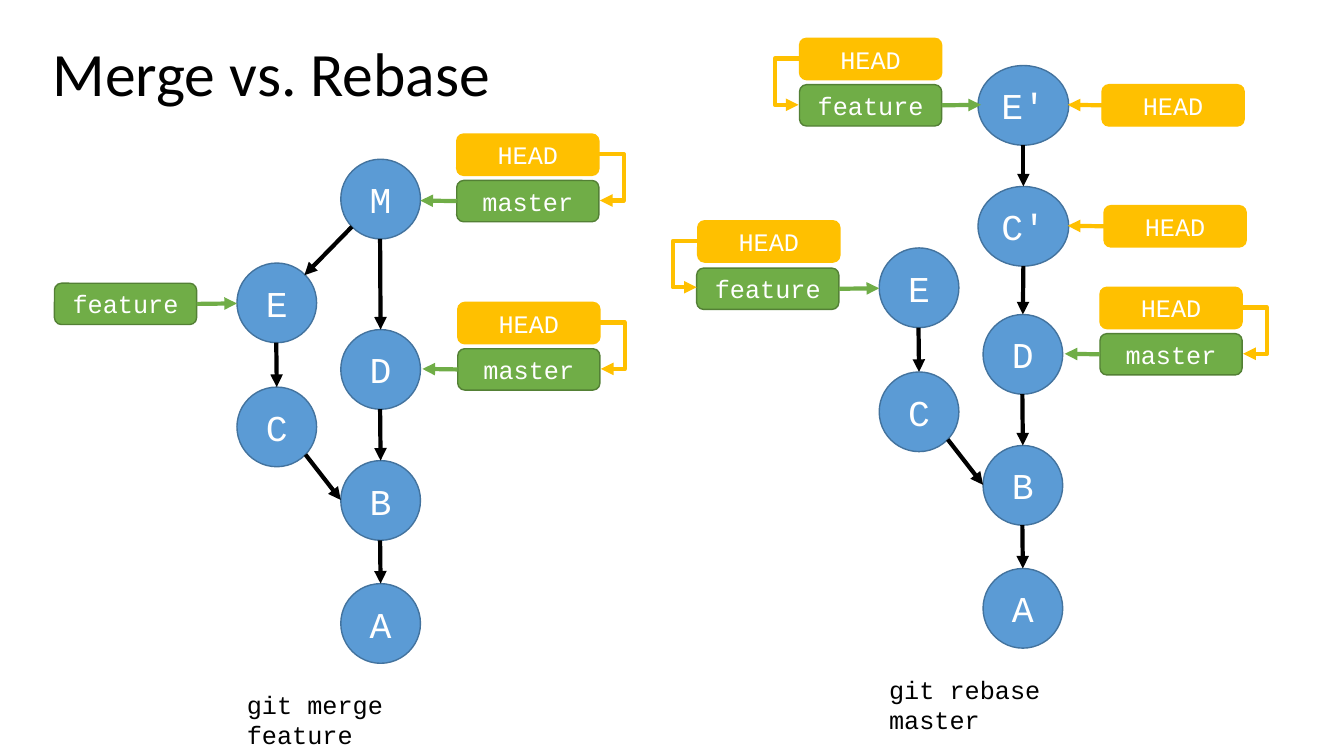
from lxml.etree import SubElement
from pptx import Presentation
from pptx.dml.color import RGBColor
from pptx.enum.shapes import MSO_CONNECTOR, MSO_SHAPE
from pptx.enum.text import MSO_ANCHOR, MSO_AUTO_SIZE, PP_ALIGN
from pptx.oxml.ns import qn
from pptx.util import Pt

PX = 9144  # EMU in one px, 100 px to the inch
COMMIT_SIZE = 79
LABEL_WIDTH, LABEL_HEIGHT = 141, 41
HEAD_RISE = 46
BRACKET_REACH = 25
LEFT, RIGHT = 1, 3
REBASE_DX, REBASE_DY = 637, -15

BLACK, WHITE = "000000", "FFFFFF"
BLUE, BLUE_EDGE = "5B9BD5", "43739E"
GREEN, GREEN_EDGE = "70AD47", "538035"
GOLD = "FFC000"
MONO = "Courier New"


def emu(*lengths):
    return [length * PX for length in lengths]


def color(value):
    return RGBColor.from_string(value)


def set_text(frame, text, size, ink, font=MONO, align=PP_ALIGN.LEFT, **frame_format):
    frame.text = text
    paragraph = frame.paragraphs[0]
    paragraph.alignment = align
    for name, value in frame_format.items():
        setattr(frame, name, value)
    for name, value in {"name": font, "size": Pt(size)}.items():
        setattr(paragraph.font, name, value)
    paragraph.font.color.rgb = color(ink)
    return paragraph


def add_node(slide, kind, box, text, size, fill, edge):
    """Add a filled shape with centred white text."""
    node = slide.shapes.add_shape(kind, *emu(*box))
    node.shadow.inherit = False
    node.fill.solid()
    node.fill.fore_color.rgb = color(fill)
    node.line.color.rgb = color(edge)
    node.line.width = Pt(1)
    set_text(node.text_frame, text, size, WHITE, align=PP_ALIGN.CENTER,
             vertical_anchor=MSO_ANCHOR.MIDDLE, word_wrap=False)
    return node


def add_commit(slide, text, x, y, width=COMMIT_SIZE):
    return add_node(slide, MSO_SHAPE.OVAL, (x, y, width, COMMIT_SIZE),
                    text, 26, BLUE, BLUE_EDGE)


def add_arrow(slide, start, end, ink=BLACK, kind=MSO_CONNECTOR.STRAIGHT):
    arrow = slide.shapes.add_connector(kind, *emu(*start, *end))
    arrow.line.color.rgb = color(ink)
    arrow.line.width = Pt(3)
    properties = arrow.element.spPr
    SubElement(properties.find(qn("a:ln")), qn("a:tailEnd"), type="triangle")
    SubElement(properties, qn("a:effectLst"))
    return arrow


def add_parent_arrow(slide, child, parent):
    """Point from the bottom of a commit to the top of the one below."""
    start = (child.left + child.width // 2) // PX, (child.top + child.height) // PX
    end = (parent.left + parent.width // 2) // PX, parent.top // PX
    add_arrow(slide, start, end).end_connect(parent, 0)


def add_ref(slide, text, x, y, side, tip_x):
    """Add a label whose arrow leaves the given side and ends at tip_x."""
    fill, edge = (GOLD, GOLD) if text == "HEAD" else (GREEN, GREEN_EDGE)
    label = add_label(slide, text, x, y, fill, edge)
    middle = y + LABEL_HEIGHT // 2
    start_x = x + LABEL_WIDTH if side == RIGHT else x
    arrow = add_arrow(slide, (start_x, middle), (tip_x, middle), fill)
    arrow.begin_connect(label, side)


def add_label(slide, text, x, y, fill, edge):
    return add_node(slide, MSO_SHAPE.ROUNDED_RECTANGLE,
                    (x, y, LABEL_WIDTH, LABEL_HEIGHT), text, 18, fill, edge)


def add_head_above(slide, x, branch_y, side):
    """Add HEAD over a branch label, with a bracket arrow down to the branch."""
    head_y = branch_y - HEAD_RISE
    add_label(slide, "HEAD", x, head_y, GOLD, GOLD)
    start_x, step = (x + LABEL_WIDTH, 1) if side == RIGHT else (x, -1)
    middle = LABEL_HEIGHT // 2
    bracket = add_arrow(slide, (start_x, head_y + middle),
                        (start_x + step, branch_y + middle), GOLD, MSO_CONNECTOR.ELBOW)
    guides = bracket.element.spPr.find(qn("a:prstGeom")).find(qn("a:avLst"))
    SubElement(guides, qn("a:gd"), name="adj1", fmla=f"val {BRACKET_REACH * 100000}")


def add_caption(slide, text, x, y):
    caption = slide.shapes.add_textbox(*emu(x, y, 254, 40))
    set_text(caption.text_frame, text, 18, BLACK, word_wrap=True,
             auto_size=MSO_AUTO_SIZE.SHAPE_TO_FIT_TEXT)


def add_history(slide, command, dx=0, dy=0):
    """Add the commits, refs and caption that both diagrams share."""
    places = {"A": (338, 579), "B": (338, 457), "C": (235, 384),
              "D": (338, 327), "E": (235, 261)}
    commits = {name: add_commit(slide, name, x + dx, y + dy)
               for name, (x, y) in places.items()}
    for child, parent in ("BA", "DB", "EC"):
        add_parent_arrow(slide, commits[child], commits[parent])
    add_arrow(slide, (303 + dx, 451 + dy), (338 + dx, 496 + dy))
    add_ref(slide, "master", 454 + dx, 346 + dy, LEFT, 419 + dx)
    add_head_above(slide, 454 + dx, 346 + dy, RIGHT)
    add_ref(slide, "feature", 54 + dx, 281 + dy, RIGHT, 235 + dx)
    add_caption(slide, command, 235 + dx, 679 + dy)
    return commits


def add_merge(slide):
    commits = add_history(slide, "git merge feature")
    merged = add_commit(slide, "M", 338, 158)
    add_parent_arrow(slide, merged, commits["D"])
    add_arrow(slide, (349, 225), (302, 273))
    add_ref(slide, "master", 453, 179, LEFT, 417)
    add_head_above(slide, 453, 179, RIGHT)


def add_rebase(slide):
    commits = add_history(slide, "git rebase master", REBASE_DX, REBASE_DY)
    replayed_c = add_commit(slide, "C'", 970, 185, 90)
    replayed_e = add_commit(slide, "E'", 970, 65, 90)
    add_parent_arrow(slide, replayed_c, commits["D"])
    add_parent_arrow(slide, replayed_e, replayed_c)
    add_head_above(slide, 692, 265, LEFT)
    add_ref(slide, "HEAD", 1095, 204, LEFT, 1059)
    add_ref(slide, "HEAD", 1093, 84, LEFT, 1059)
    add_ref(slide, "feature", 793, 84, RIGHT, 973)
    add_head_above(slide, 793, 84, LEFT)


def add_title(slide, text):
    title = slide.shapes.title
    for name, value in zip(("left", "top", "width", "height"), emu(42, 3, 1150, 145)):
        setattr(title, name, value)
    heading = set_text(title.text_frame, text, 44, BLACK, "Calibri",
                       vertical_anchor=MSO_ANCHOR.MIDDLE)
    heading.line_spacing = 0.9


def main():
    deck = Presentation()
    deck.slide_width, deck.slide_height = emu(1333, 750)
    slide = deck.slides.add_slide(deck.slide_layouts[5])
    add_title(slide, "Merge vs. Rebase")
    add_merge(slide)
    add_rebase(slide)
    deck.save("out.pptx")


if __name__ == "__main__":
    main()
